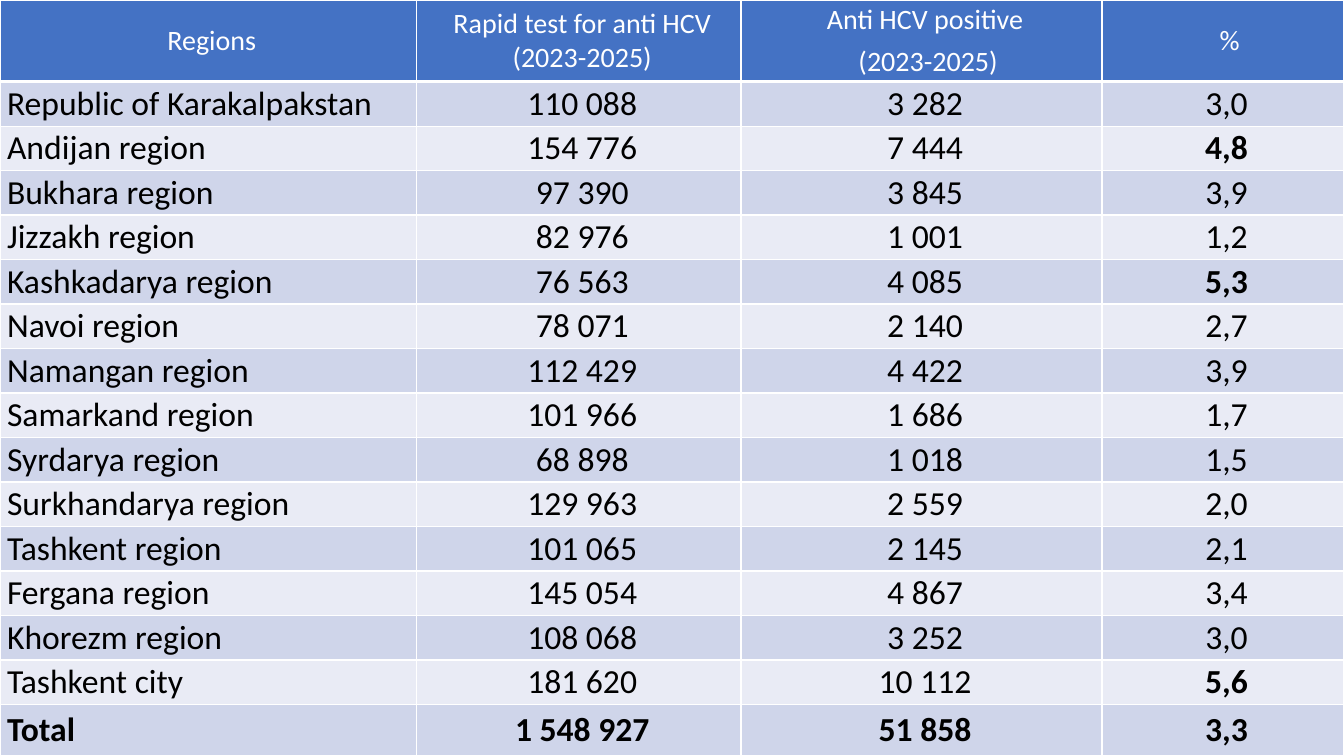
from lxml.etree import SubElement
from pptx import Presentation
from pptx.dml.color import RGBColor
from pptx.enum.text import MSO_ANCHOR, PP_ALIGN
from pptx.oxml.ns import qn
from pptx.util import Inches, Pt

FONT = "Calibri"
WHITE = RGBColor(0xFF, 0xFF, 0xFF)
BLACK = RGBColor(0, 0, 0)
HEADER_BLUE = RGBColor(0x44, 0x72, 0xC4)
BANDS = (RGBColor(0xE9, 0xEB, 0xF5), RGBColor(0xCF, 0xD5, 0xEA))

WIDTH, HEIGHT = 13.33, 7.5
COLUMN_WIDTHS = (4.13, 3.22, 3.58, 2.4)
HEADER_HEIGHT, TOTAL_HEIGHT = 0.81, 0.51
HIGH_PERCENT = 4

HEADER = ("Regions", "Rapid test for anti HCV (2023-2025)",
          "Anti HCV positive\n (2023-2025)", " %")
REGIONS = (
    ("Republic of Karakalpakstan", "110 088", "3 282", "3,0"),
    ("Andijan region", "154 776", "7 444", "4,8"),
    ("Bukhara region", "97 390", "3 845", "3,9"),
    ("Jizzakh region", "82 976", "1 001", "1,2"),
    ("Kashkadarya region", "76 563", "4 085", "5,3"),
    ("Navoi region", "78 071", "2 140", "2,7"),
    ("Namangan region", "112 429", "4 422", "3,9"),
    ("Samarkand region", "101 966", "1 686", "1,7"),
    ("Syrdarya region", "68 898", "1 018", "1,5"),
    ("Surkhandarya region", "129 963", "2 559", "2,0"),
    ("Tashkent region", "101 065", "2 145", "2,1"),
    ("Fergana region", "145 054", "4 867", "3,4"),
    ("Khorezm region", "108 068", "3 252", "3,0"),
    ("Tashkent city", "181 620", "10 112", "5,6"),
)
TOTAL = ("Total", "1 548 927", "51 858", "3,3")


def set_borders(cell, widths):
    """Draw white borders; widths are points for left, right, top, bottom."""
    properties = cell._tc.get_or_add_tcPr()
    for position, (side, width) in enumerate(zip("LRTB", widths)):
        line = SubElement(properties, qn(f"a:ln{side}"), w=str(Pt(width)))
        fill = SubElement(line, qn("a:solidFill"))
        SubElement(fill, qn("a:srgbClr"), val=str(WHITE))
        properties.insert(position, line)


def fill_cell(cell, text, fill, size, color, alignment, bold=False):
    cell.fill.solid()
    cell.fill.fore_color.rgb = fill
    cell.vertical_anchor = MSO_ANCHOR.MIDDLE
    cell.margin_left = cell.margin_right = cell.margin_top = cell.margin_bottom = 0
    cell.text_frame.text = text
    for paragraph in cell.text_frame.paragraphs:
        paragraph.alignment = alignment
        paragraph.space_after = Pt(5)
        paragraph._p.get_or_add_pPr().set("marL", str(Inches(0.07)))
        for run in paragraph.runs:
            run.font.name = FONT
            run.font.size = Pt(size)
            run.font.bold = bold
            run.font.color.rgb = color


def add_region_table(slide):
    row_count = len(REGIONS) + 2
    table = slide.shapes.add_table(row_count, len(HEADER), 0, 0,
                                   Inches(WIDTH), Inches(HEIGHT)).table
    for column, width in zip(table.columns, COLUMN_WIDTHS):
        column.width = Inches(width)
    region_height = (HEIGHT - HEADER_HEIGHT - TOTAL_HEIGHT) / len(REGIONS)
    heights = [HEADER_HEIGHT] + [region_height] * len(REGIONS) + [TOTAL_HEIGHT]
    for row, height in zip(table.rows, heights):
        row.height = Inches(height)

    for column_index, text in enumerate(HEADER):
        cell = table.cell(0, column_index)
        fill_cell(cell, text, HEADER_BLUE, 20, WHITE, PP_ALIGN.CENTER)
        set_borders(cell, (1, 1, 1, 3))

    for row_index, values in enumerate((*REGIONS, TOTAL), start=1):
        is_high = float(values[-1].replace(",", ".")) >= HIGH_PERCENT
        for column_index, text in enumerate(values):
            is_percent = column_index == len(values) - 1
            fill_cell(table.cell(row_index, column_index), text,
                      BANDS[row_index % 2], 24, BLACK,
                      PP_ALIGN.CENTER if column_index else PP_ALIGN.LEFT,
                      bold=values is TOTAL or (is_percent and is_high))


def main():
    presentation = Presentation()
    presentation.slide_width = Inches(WIDTH)
    presentation.slide_height = Inches(HEIGHT)
    slide = presentation.slides.add_slide(presentation.slide_layouts[6])
    add_region_table(slide)
    presentation.save("out.pptx")


if __name__ == "__main__":
    main()
